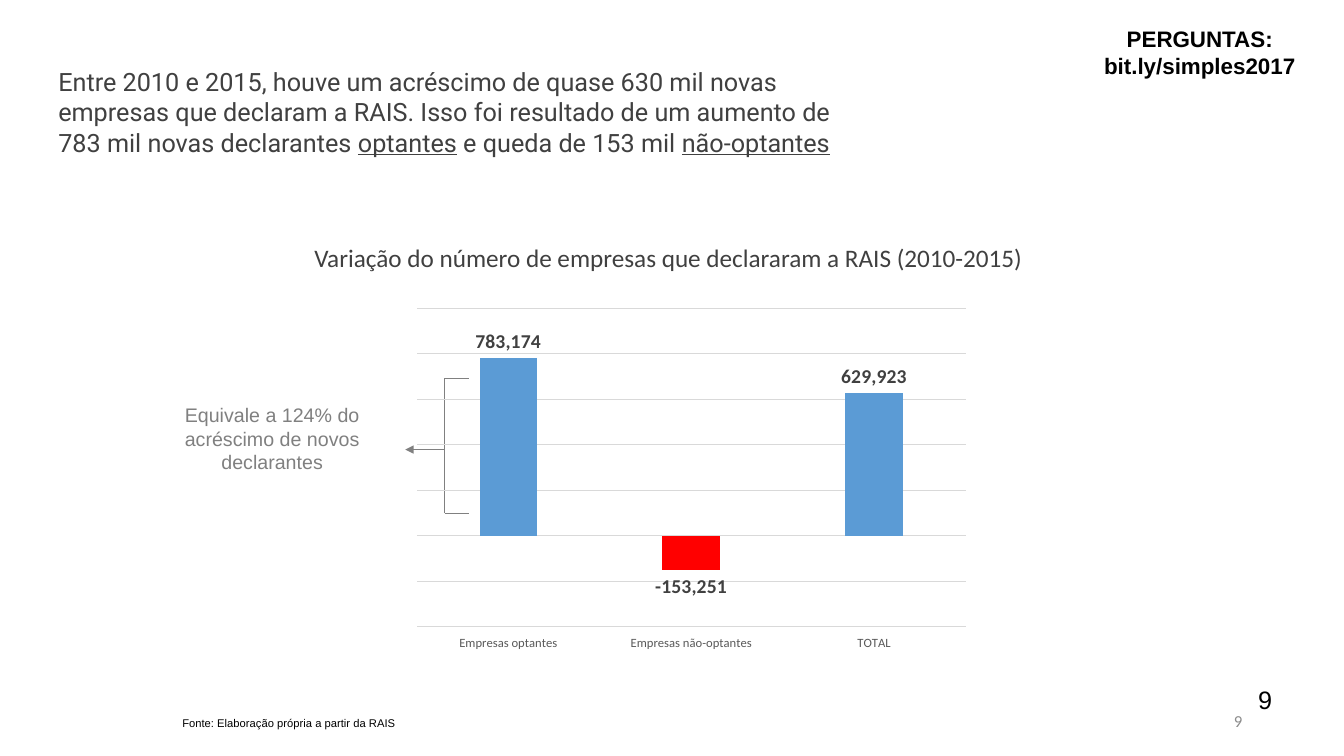
from dataclasses import dataclass

from lxml import etree
from pptx import Presentation
from pptx.chart.data import CategoryChartData
from pptx.dml.color import RGBColor
from pptx.enum.chart import XL_CHART_TYPE, XL_LABEL_POSITION, XL_TICK_LABEL_POSITION, XL_TICK_MARK
from pptx.enum.shapes import MSO_CONNECTOR, MSO_SHAPE
from pptx.enum.text import MSO_ANCHOR, MSO_AUTO_SIZE, PP_ALIGN
from pptx.oxml import parse_xml
from pptx.oxml.ns import nsdecls, qn
from pptx.util import Emu, Pt

PX = 9144  # EMU per px, 100 px to the inch
BLACK, DARK, GREY, LIGHT = "000000", "404040", "808080", "D9D9D9"
BLUE, RED, WHITE = "5B9BD5", "FF0000", "FFFFFF"


@dataclass
class Label:
    box: tuple[int, int, int, int]
    lines: list[list[str]]  # paragraphs of runs; every second run is underlined
    size: int
    font: str = "Arial"
    color: str = BLACK
    align: PP_ALIGN = PP_ALIGN.LEFT
    bold: bool = False
    fill: str | None = None
    middle: bool = False


@dataclass
class Line:
    start: tuple[int, int]
    end: tuple[int, int]
    arrow: bool = False


def px(*values: int) -> list[Emu]:
    return [Emu(v * PX) for v in values]


def rgb(value: str) -> RGBColor:
    return RGBColor.from_string(value)


def set_font(font, size: int, color: str, name: str, bold: bool = False) -> None:
    font.size, font.name, font.bold = Pt(size), name, bold
    font.color.rgb = rgb(color)


def add_label(shapes, label: Label) -> None:
    if label.fill:
        sp = shapes.add_shape(MSO_SHAPE.RECTANGLE, *px(*label.box))
        sp.shadow.inherit = False
        sp.fill.solid()
        sp.fill.fore_color.rgb = rgb(label.fill)
        sp.line.fill.background()
    else:
        sp = shapes.add_textbox(*px(*label.box))
    tf = sp.text_frame
    tf.word_wrap = True
    tf.auto_size = MSO_AUTO_SIZE.NONE if label.middle else MSO_AUTO_SIZE.SHAPE_TO_FIT_TEXT
    tf.vertical_anchor = MSO_ANCHOR.MIDDLE if label.middle else MSO_ANCHOR.TOP
    for i, runs in enumerate(label.lines):
        p = tf.add_paragraph() if i else tf.paragraphs[0]
        p.alignment = label.align
        for j, text in enumerate(runs):
            r = p.add_run()
            r.text = text
            set_font(r.font, label.size, label.color, label.font, label.bold)
            if j % 2:
                r.font.underline = True


def add_line(shapes, line: Line) -> None:
    cxn = shapes.add_connector(MSO_CONNECTOR.STRAIGHT, *px(*line.start, *line.end))
    cxn.line.width = Pt(0.5)
    cxn.line.color.rgb = rgb(GREY)
    if line.arrow:
        etree.SubElement(cxn.line._get_or_add_ln(), qn("a:tailEnd"), type="triangle")
    etree.SubElement(cxn._element.spPr, qn("a:effectLst"))


def add_variation_chart(shapes) -> None:
    data = CategoryChartData(number_format="#,##0")
    data.categories = ["Empresas optantes", "Empresas não-optantes", "TOTAL"]
    data.add_series("Series 1", [783174, -153251, 629923])
    chart = shapes.add_chart(XL_CHART_TYPE.COLUMN_CLUSTERED, *px(402, 299, 567, 354), data).chart
    set_font(chart.font, 10, BLACK, "Calibri")
    chart.has_legend = chart.has_title = False
    # Transparent background keeps the bracket visible
    chart._chartSpace.find(qn("c:chart")).addnext(parse_xml(
        f'<c:spPr {nsdecls("c", "a")}><a:noFill/><a:ln><a:noFill/></a:ln></c:spPr>'))

    # Axes
    cat, val = chart.category_axis, chart.value_axis
    cat.tick_label_position = XL_TICK_LABEL_POSITION.LOW
    cat.major_tick_mark = cat.minor_tick_mark = XL_TICK_MARK.NONE
    set_font(cat.tick_labels.font, 9, "595959", "Calibri")
    val.visible = False
    val.minimum_scale, val.maximum_scale, val.major_unit = -400000, 1000000, 200000
    val.has_major_gridlines = True
    for rule in (cat.format.line, val.major_gridlines.format.line):
        rule.width = Pt(0.75)
        rule.color.rgb = rgb(LIGHT)

    # Columns and their values
    plot = chart.plots[0]
    plot.gap_width, plot.overlap, plot.vary_by_categories = 219, -27, False
    series = plot.series[0]
    series.invert_if_negative = False
    for fmt, color in ((series.format, BLUE), (series.points[1].format, RED)):
        fmt.fill.solid()
        fmt.fill.fore_color.rgb = rgb(color)
    labels = series.data_labels
    labels.show_value = True
    labels.number_format, labels.number_format_is_linked = "#,##0", False
    labels.position = XL_LABEL_POSITION.OUTSIDE_END
    set_font(labels.font, 14, DARK, "Calibri", bold=True)


PAGE_NUMBER = Label((1238, 674, 95, 40), [["9"]], 18)
TEXTS = [
    Label((48, 61, 795, 131), [[
        "Entre 2010 e 2015, houve um acréscimo de quase 630 mil novas empresas que declaram a RAIS. "
        "Isso foi resultado de um aumento de 783 mil novas declarantes ",
        "optantes", " e queda de 153 mil ", "não-optantes"]], 18, "Roboto", DARK),
    Label((297, 235, 732, 40), [["Variação do número de empresas que declararam a RAIS (2010-2015)"]],
          18, "Calibri", DARK, PP_ALIGN.CENTER),
    Label((171, 706, 276, 24), [["Fonte: Elaboração própria a partir da RAIS"]], 8),
]
BRACKET = [
    Line((441, 509), (465, 509)),
    Line((441, 375), (441, 509)),
    Line((441, 375), (465, 375)),
    Line((441, 446), (402, 446), arrow=True),
]
BRACKET_NOTE = Label((152, 395, 236, 81), [["Equivale a 124% do acréscimo de novos declarantes"]],
                     14, color=GREY, align=PP_ALIGN.CENTER)
CORNER = [
    Label((1068, 20, 244, 64), [["PERGUNTAS:"], ["bit.ly/simples2017"]], 16,
          align=PP_ALIGN.CENTER, bold=True, fill=WHITE),
    Label((942, 695, 300, 40), [["9"]], 12, "Calibri", "8C8C8C", PP_ALIGN.RIGHT, middle=True),
]


def main() -> None:
    prs = Presentation()
    prs.slide_width, prs.slide_height = px(1333, 750)
    shapes = prs.slides.add_slide(prs.slide_layouts[6]).shapes
    for label in [PAGE_NUMBER, *TEXTS]:
        add_label(shapes, label)
    bracket = shapes.add_group_shape()
    for line in BRACKET:
        add_line(bracket.shapes, line)
    add_label(shapes, BRACKET_NOTE)
    add_variation_chart(shapes)
    for label in CORNER:
        add_label(shapes, label)
    prs.save("out.pptx")


if __name__ == "__main__":
    main()
